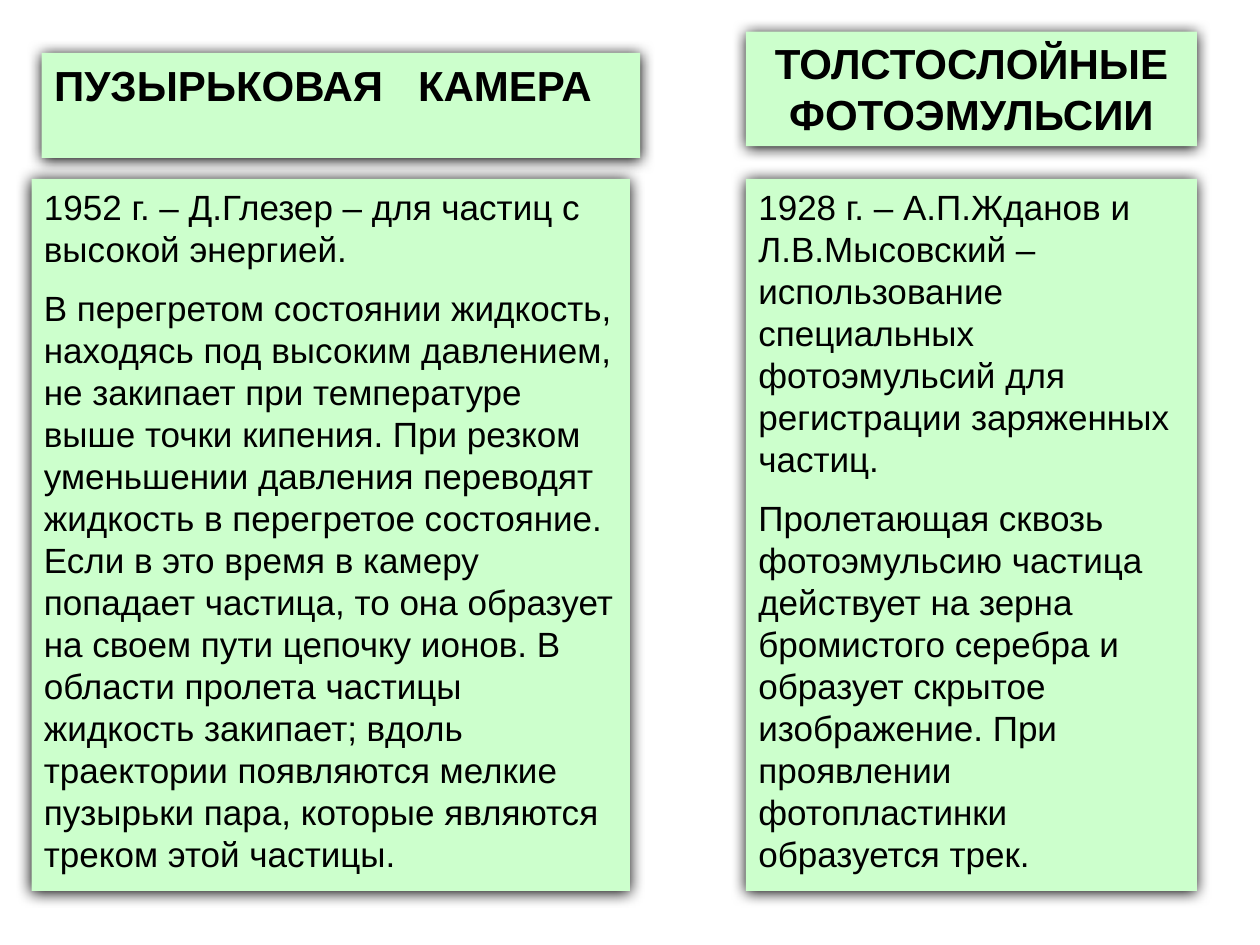
from dataclasses import dataclass

from lxml.etree import SubElement
from pptx import Presentation
from pptx.dml.color import RGBColor
from pptx.enum.shapes import MSO_SHAPE as Preset
from pptx.enum.text import MSO_ANCHOR as Anchor, MSO_AUTO_SIZE as AutoSize, PP_ALIGN as Align
from pptx.oxml.ns import qn
from pptx.util import Inches, Pt


@dataclass(frozen=True)
class Theme:
    """Colours, font and type sizes of the slide."""

    panel: RGBColor = RGBColor(0xCC, 0xFF, 0xCC)
    text: RGBColor = RGBColor(0, 0, 0)
    shadow: str = "000000"
    font: str = "Arial"
    heading_size: int = 24
    body_size: int = 20


LEFT_HEADING = "ПУЗЫРЬКОВАЯ   КАМЕРА"
LEFT_BODY = (
    "1952 г. – Д.Глезер – для частиц с высокой энергией.",
    "В перегретом состоянии жидкость, находясь под высоким давлением, не закипает "
    "при температуре выше точки кипения. При резком уменьшении давления переводят "
    "жидкость в перегретое состояние. Если в это время в камеру попадает частица, "
    "то она образует на своем пути цепочку ионов. В области пролета частицы жидкость "
    "закипает; вдоль траектории появляются мелкие пузырьки пара, которые являются "
    "треком этой частицы.",
)
RIGHT_HEADING = "ТОЛСТОСЛОЙНЫЕ ФОТОЭМУЛЬСИИ"
RIGHT_BODY = (
    "1928 г. – А.П.Жданов и Л.В.Мысовский – использование специальных фотоэмульсий "
    "для регистрации заряженных частиц.",
    "Пролетающая сквозь фотоэмульсию частица действует на зерна бромистого серебра "
    "и образует скрытое изображение. При проявлении фотопластинки образуется трек.",
)


def write_text(shape, paragraphs, *, size, font, color, bold=False, align=Align.LEFT):
    """Fill a shape with paragraphs half a line apart."""
    frame = shape.text_frame
    frame.word_wrap = True
    frame.auto_size = AutoSize.SHAPE_TO_FIT_TEXT
    frame.vertical_anchor = Anchor.TOP
    for index, text in enumerate(paragraphs):
        paragraph = frame.add_paragraph() if index else frame.paragraphs[0]
        paragraph.alignment = align
        paragraph.space_before = Pt(size / 2 if index else 0)
        run = paragraph.add_run()
        run.text = text
        run.font.name = font
        run.font.size = Pt(size)
        run.font.bold = bold
        run.font.color.rgb = color


class SlideBuilder:
    """Holds the theme and the current slide."""

    def __init__(self, slide, theme):
        """Keep the slide and its theme."""
        self.slide = slide
        self.theme = theme

    def style_panel(self, shape):
        """Give a shape the panel fill and a soft shadow."""
        shape.fill.solid()
        shape.fill.fore_color.rgb = self.theme.panel
        shape.line.fill.background()
        shape.shadow.inherit = False
        effects = shape._element.spPr.find(qn("a:effectLst"))
        shadow = SubElement(
            effects, qn("a:outerShdw"), blurRad=str(Pt(8.5)), dist=str(Pt(1)),
            dir="5400000", algn="ctr", rotWithShape="0",
        )
        SubElement(shadow, qn("a:srgbClr"), val=self.theme.shadow)

    def title(self, text, left, top, width, height):
        """Place the title placeholder as a heading panel."""
        shape = self.slide.shapes.title
        shape.left, shape.top = Inches(left), Inches(top)
        shape.width, shape.height = Inches(width), Inches(height)
        self.style_panel(shape)
        self.heading_text(shape, text, Align.LEFT)

    def heading(self, text, left, top, width, height):
        """Add a centred heading panel."""
        self.heading_text(self.panel(left, top, width, height), text, Align.CENTER)

    def body(self, paragraphs, left, top, width, height):
        """Add a panel of running text."""
        write_text(
            self.panel(left, top, width, height), paragraphs,
            size=self.theme.body_size, font=self.theme.font, color=self.theme.text,
        )

    def panel(self, left, top, width, height):
        """Add an empty rectangular panel."""
        shape = self.slide.shapes.add_shape(
            Preset.RECTANGLE, Inches(left), Inches(top), Inches(width), Inches(height)
        )
        self.style_panel(shape)
        return shape

    def heading_text(self, shape, text, align):
        """Write a bold heading into a shape."""
        write_text(
            shape, [text], size=self.theme.heading_size, font=self.theme.font,
            color=self.theme.text, bold=True, align=align,
        )


def main():
    """Build and save the slide."""
    presentation = Presentation()
    presentation.slide_width, presentation.slide_height = Inches(10), Inches(7.5)
    slide = presentation.slides.add_slide(presentation.slide_layouts[5])
    builder = SlideBuilder(slide, Theme())
    left_width, right_left, right_width = 4.75, 5.92, 3.58
    body_top, body_height = 1.42, 5.65
    builder.title(LEFT_HEADING, 0.33, 0.42, left_width, 0.51)
    builder.body(LEFT_BODY, 0.25, body_top, left_width, body_height)
    builder.heading(RIGHT_HEADING, right_left, 0.25, right_width, 0.91)
    builder.body(RIGHT_BODY, right_left, body_top, right_width, body_height)
    presentation.save("out.pptx")


if __name__ == "__main__":
    main()
